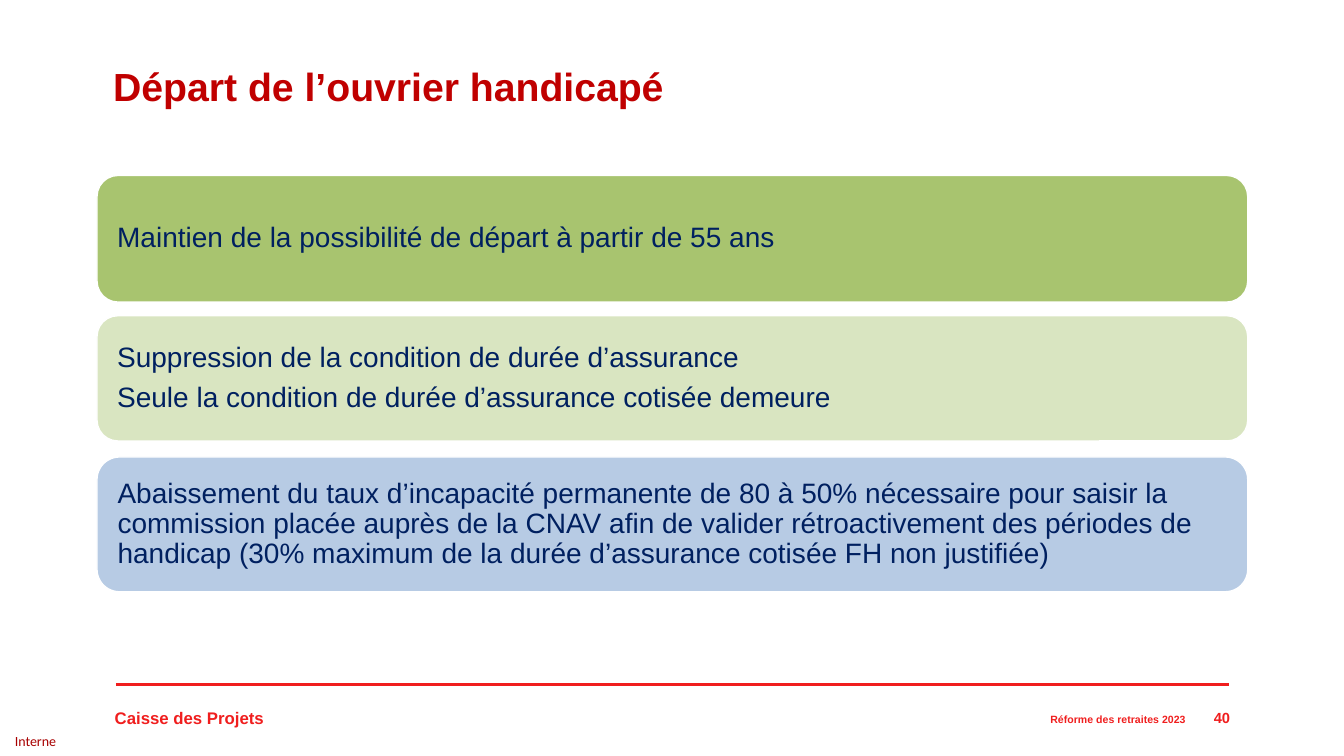
from dataclasses import dataclass
from lxml.etree import SubElement
from pptx import Presentation
from pptx.dml.color import RGBColor
from pptx.enum.shapes import MSO_CONNECTOR, MSO_SHAPE
from pptx.enum.text import MSO_ANCHOR, PP_ALIGN
from pptx.oxml.ns import qn
from pptx.util import Pt


@dataclass(frozen=True)
class Theme:
    font: str = "Arial"
    tag_font: str = "Calibri"
    title: str = "C00000"
    body: str = "002060"
    brand: str = "F01E1E"
    tag: str = "A80000"
    white: str = "FFFFFF"
    green: str = "A8C46F"
    pale: str = "D9E5C1"
    blue: str = "B7CBE4"
    title_size: float = 28
    body_size: float = 20
    org_size: float = 12
    page_size: float = 10.5
    tag_size: float = 10
    note_size: float = 7.5


THEME = Theme()


def color(code):
    return RGBColor.from_string(code)


def add_run(para, text, size, code, bold=False, font=THEME.font):
    run = para.add_run()
    run.text = text
    run.font.name = font
    run.font.size = Pt(size)
    run.font.bold = bold
    run.font.color.rgb = color(code)


def add_label(slide, box, text, size, code, bold=True, font=THEME.font,
              align=PP_ALIGN.LEFT, anchor=MSO_ANCHOR.MIDDLE, inset=None):
    frame = slide.shapes.add_textbox(*map(Pt, box)).text_frame
    frame.word_wrap = True
    frame.vertical_anchor = anchor
    if inset is not None:
        set_inset(frame, inset)
    para = frame.paragraphs[0]
    para.alignment = align
    add_run(para, text, size, code, bold, font)
    return para


def set_inset(frame, inset):
    frame.margin_left = frame.margin_right = Pt(inset)
    frame.margin_top = frame.margin_bottom = Pt(inset)


# Title
def add_title(slide, box, text):
    para = add_label(slide, box, text, THEME.title_size, THEME.title,
                     anchor=MSO_ANCHOR.TOP)
    para.line_spacing = 0.9


# Rounded card with one paragraph per line of text
def add_card(slide, box, fill, lines):
    card = slide.shapes.add_shape(MSO_SHAPE.ROUNDED_RECTANGLE, *map(Pt, box))
    card.shadow.inherit = False
    card.fill.solid()
    card.fill.fore_color.rgb = color(fill)
    card.line.color.rgb = color(THEME.white)
    card.line.width = Pt(1)
    frame = card.text_frame
    frame.word_wrap = True
    frame.vertical_anchor = MSO_ANCHOR.MIDDLE
    set_inset(frame, 10)
    for i, text in enumerate(lines):
        para = frame.add_paragraph() if i else frame.paragraphs[0]
        para.alignment = PP_ALIGN.LEFT
        para.line_spacing = 0.9
        para.space_before = Pt(7 if i else 0)
        add_run(para, text, THEME.body_size, THEME.body)


# Stack of cards, each with its offset and height
def add_stack(slide, box, cards):
    left, top, width = box
    for shift, height, fill, lines in cards:
        add_card(slide, (left, top + shift, width, height), fill, lines)


# Footer: rule, organisation, topic, page number and marking
def add_footer(slide, box):
    left, top, width = box
    right = left + width
    rule = slide.shapes.add_connector(
        MSO_CONNECTOR.STRAIGHT, Pt(left), Pt(top), Pt(right), Pt(top))
    rule.line.color.rgb = color(THEME.brand)
    rule.line.width = Pt(2)
    SubElement(rule._element.spPr, qn("a:effectLst"))

    add_label(slide, (left - 7.9, top + 13, 150, 21.6), "Caisse des Projets",
              THEME.org_size, THEME.brand, anchor=MSO_ANCHOR.TOP)
    add_label(slide, (right - 307.5, top + 15.2, 283.7, 20.2),
              "Réforme des retraites 2023", THEME.note_size, THEME.brand,
              align=PP_ALIGN.RIGHT)
    add_label(slide, (right - 34.6, top + 13, 42.5, 22.3), "40",
              THEME.page_size, THEME.brand, align=PP_ALIGN.RIGHT)
    add_label(slide, (left - 72.2, top + 30.5, 40.5, 20.6), "Interne",
              THEME.tag_size, THEME.tag, bold=False, font=THEME.tag_font,
              inset=0)


def main():
    deck = Presentation()
    deck.slide_width, deck.slide_height = Pt(960), Pt(540)
    slide = deck.slides.add_slide(deck.slide_layouts[6])
    add_footer(slide, (82.8, 488.7, 795))
    add_title(slide, (73.8, 44.6, 822, 36.7), "Départ de l’ouvrier handicapé")
    add_stack(slide, (69.3, 125.3, 822), [
        (0, 90.5, THEME.green,
         ["Maintien de la possibilité de départ à partir de 55 ans"]),
        (100.2, 89.5, THEME.pale,
         ["Suppression de la condition de durée d’assurance",
          "Seule la condition de durée d’assurance cotisée demeure"]),
        (201.1, 96.3, THEME.blue,
         ["Abaissement du taux d’incapacité permanente de 80 à 50% "
          "nécessaire pour saisir la commission placée auprès de la CNAV "
          "afin de valider rétroactivement des périodes de handicap (30% "
          "maximum de la durée d’assurance cotisée FH non justifiée)"]),
    ])
    deck.save("out.pptx")


if __name__ == "__main__":
    main()
